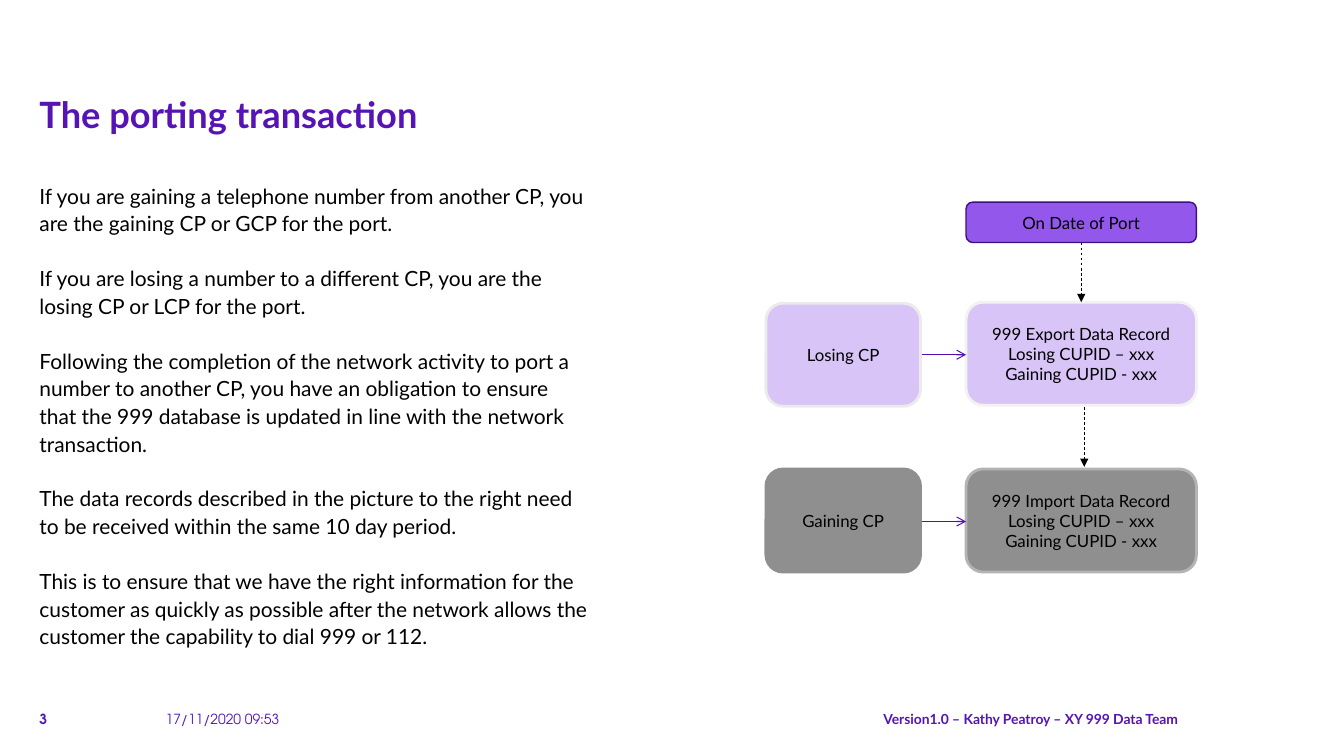
import pptx
import pptx.dml.color
import pptx.enum.dml
import pptx.enum.shapes
import pptx.enum.text
import pptx.oxml.ns
import pptx.util
from lxml import etree

PX = 9144
COLORS = {
    "ink": "000000", "brand": "5514B3", "arrow": "5210B3",
    "port": "9457EC", "port_edge": "3F0F84",
    "lilac": "D9C4F8", "lilac_edge": "EBEBEB", "record_edge": "F2F2F2",
    "grey": "8F8F8F", "grey_edge": "B4B4B4",
}
ALIGN = pptx.enum.text.PP_ALIGN
ANCHOR = pptx.enum.text.MSO_ANCHOR
DASH = pptx.enum.dml.MSO_LINE.DASH
TITLE = {"name": "Lato", "size": 25.8, "bold": True}
BODY = {"name": "Lato", "size": 14.9, "bold": False}
LABEL = {"name": "Lato", "size": 12, "bold": False}
FOOTER = {"name": "Lato", "size": 9.9, "bold": True}
NUMBER = FOOTER | {"name": "TeX Gyre Adventor"}
DATE = NUMBER | {"bold": False}
PARAGRAPHS = [
    "If you are gaining a telephone number from another CP, you are the gaining CP or GCP for the port.",
    "If you are losing a number to a different CP, you are the losing CP or LCP for the port.",
    "Following the completion of the network activity to port a number to another CP, you have an "
    "obligation to ensure that the 999 database is updated in line with the network transaction.",
    "The data records described in the picture to the right need to be received within the same 10 day period.",
    "This is to ensure that we have the right information for the customer as quickly as possible after "
    "the network allows the customer the capability to dial 999 or 112.",
]


def rgb(name):
    """Return the named colour."""
    return pptx.dml.color.RGBColor.from_string(COLORS[name])


def px(*lengths):
    """Turn px lengths into EMU."""
    return [pptx.util.Emu(n * PX) for n in lengths]


def place(sp, box):
    """Move a shape to a box."""
    for key, value in zip(("left", "top", "width", "height"), px(*box)):
        setattr(sp, key, value)


def set_frame(tf, anchor, margin=None):
    """Set wrapping, anchor and insets of a text frame."""
    values = {"word_wrap": True, "auto_size": pptx.enum.text.MSO_AUTO_SIZE.NONE, "vertical_anchor": anchor}
    if margin is not None:
        values |= {"margin_" + side: margin for side in ("left", "top", "right", "bottom")}
    for key, value in values.items():
        setattr(tf, key, value)


def write(tf, text, font, color, **para):
    """Fill a text frame and format all its paragraphs."""
    tf.text = text
    for p in tf.paragraphs:
        for key, value in para.items():
            setattr(p, key, value)
        for r in p.runs:
            for key, value in font.items():
                setattr(r.font, key, pptx.util.Pt(value) if key == "size" else value)
            r.font.color.rgb = rgb(color)


def add_title(s, box):
    """Place the slide title."""
    sp = s.shapes.title
    place(sp, box)
    set_frame(sp.text_frame, ANCHOR.TOP, 0)
    write(sp.text_frame, "The porting transaction", TITLE, "brand", alignment=ALIGN.LEFT)


def add_body(s, box):
    """Place the explanatory paragraphs."""
    sp = s.placeholders[1]
    place(sp, box)
    tf = sp.text_frame
    set_frame(tf, ANCHOR.TOP, 0)
    write(tf, "\n".join(PARAGRAPHS), BODY, "ink", level=1, alignment=ALIGN.LEFT, line_spacing=1.1,
          space_before=pptx.util.Pt(0), space_after=pptx.util.Pt(19.4))
    for p in tf.paragraphs:
        pPr = p._p.get_or_add_pPr()
        pPr.set("marL", "0")
        pPr.set("indent", "0")
        etree.SubElement(pPr, pptx.oxml.ns.qn("a:buNone"))


def add_footer(s, box):
    """Place the slide number, date and version along the bottom."""
    x, y, w, h = box
    parts = [
        (0, 39, "3", NUMBER, ALIGN.LEFT),
        (125, 203, "17/11/2020 09:53", DATE, ALIGN.LEFT),
        (360, w - 360, "Version1.0 – Kathy Peatroy – XY 999 Data Team", FOOTER, ALIGN.RIGHT),
    ]
    for dx, width, text, font, align in parts:
        tf = s.shapes.add_textbox(*px(x + dx, y, width, h)).text_frame
        set_frame(tf, ANCHOR.BOTTOM, 0)
        write(tf, text, font, "brand", alignment=align)


def add_node(s, box, text, fill, edge, weight=2):
    """Draw one labelled rounded box."""
    sp = s.shapes.add_shape(pptx.enum.shapes.MSO_SHAPE.ROUNDED_RECTANGLE, *px(*box))
    sp.shadow.inherit = False
    sp.fill.solid()
    sp.fill.fore_color.rgb = rgb(fill)
    sp.line.color.rgb = rgb(edge)
    sp.line.width = pptx.util.Pt(weight)
    set_frame(sp.text_frame, ANCHOR.MIDDLE)
    write(sp.text_frame, text, LABEL, "ink", alignment=ALIGN.CENTER)


def add_arrow(s, ends, color, weight, head, dash=None):
    """Draw a straight arrow."""
    c = s.shapes.add_connector(pptx.enum.shapes.MSO_CONNECTOR.STRAIGHT, *px(*ends))
    c.line.color.rgb = rgb(color)
    c.line.width = pptx.util.Pt(weight)
    if dash:
        c.line.dash_style = dash
    qn = pptx.oxml.ns.qn
    spPr = c.element.spPr
    etree.SubElement(spPr.find(qn("a:ln")), qn("a:tailEnd"), type=head)
    etree.SubElement(spPr, qn("a:effectLst"))


def add_diagram(s, box):
    """Draw the porting flow: providers on the left, records on the right."""
    x, y, w, h = box
    cp_w, record_w, node_h, port_h = 153, 228, 102, 40
    record_x = x + w - record_w
    rows = [
        ("Losing CP", "Export", y + 100, 99, "lilac", "lilac_edge", "record_edge"),
        ("Gaining CP", "Import", y + h - node_h, 264, "grey", "grey", "grey_edge"),
    ]
    for cp, record, top, record_dy, fill, cp_edge, record_edge in rows:
        text = f"999 {record} Data Record\vLosing CUPID – xxx\nGaining CUPID - xxx"
        add_node(s, (record_x, y + record_dy, record_w, node_h), text, fill, record_edge)
        add_node(s, (x, top, cp_w, node_h), cp, fill, cp_edge)
        mid = y + record_dy + node_h // 2 + 1
        add_arrow(s, (x + cp_w + 1, mid, record_x, mid), "arrow", 0.75, "arrow")
    add_node(s, (record_x, y, record_w, port_h), "On Date of Port", "port", "port_edge", 1)
    for dx, top in ((114, y + port_h), (117, y + 203)):
        add_arrow(s, (record_x + dx, top, record_x + dx, top + 59), "ink", 0.5, "triangle", DASH)


def main():
    """Build and save the slide."""
    prs = pptx.Presentation()
    prs.slide_width, prs.slide_height = px(1330, 748)
    s = prs.slides.add_slide(prs.slide_layouts[1])
    add_title(s, (39, 91, 508, 87))
    add_body(s, (39, 179, 543, 394))
    add_footer(s, (39, 691, 1127, 29))
    add_diagram(s, (758, 200, 426, 366))
    prs.save("out.pptx")


if __name__ == "__main__":
    main()
